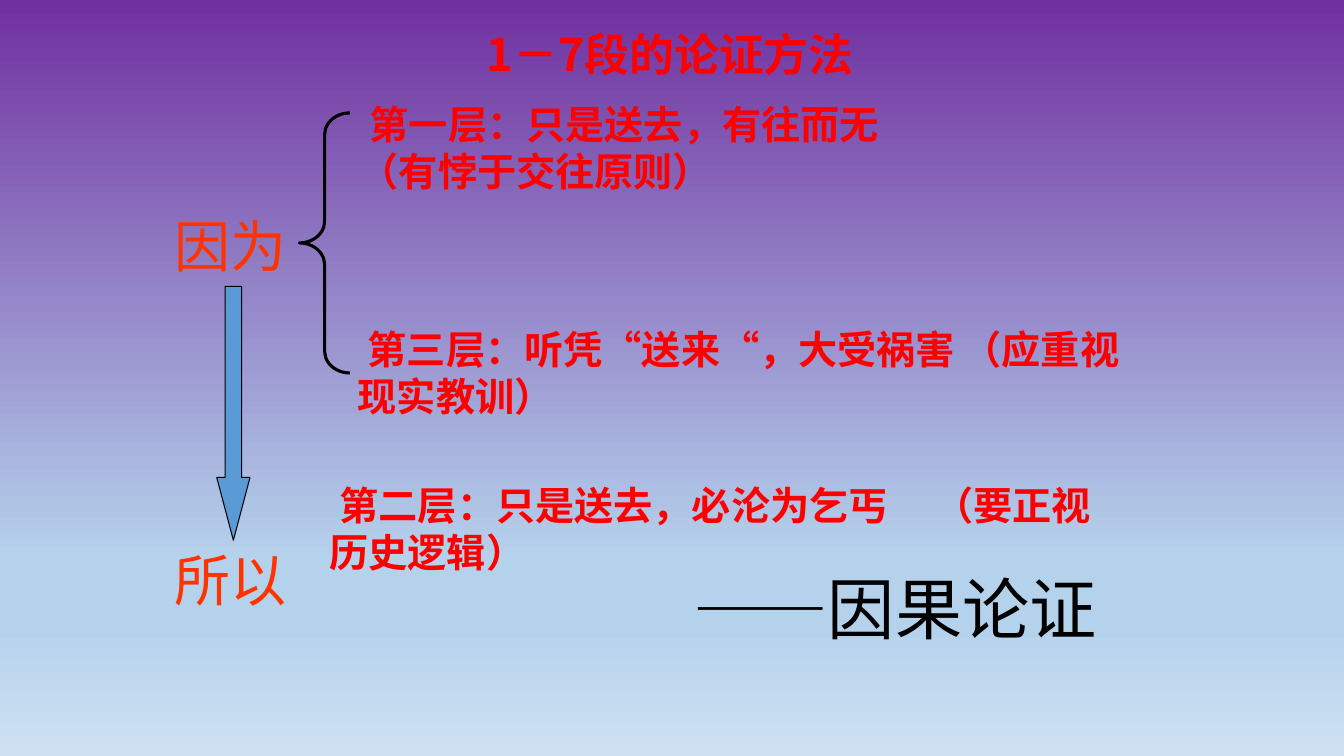
from copy import deepcopy
from lxml import etree
from pptx import Presentation
from pptx.dml.color import RGBColor
from pptx.enum.shapes import MSO_SHAPE
from pptx.oxml.ns import qn
from pptx.util import Inches, Pt

COLORS = {
    "purple": "7030A0", "sky": "B5D2EC", "pale": "CEE1F2",
    "red": "FF0000", "orange": "FF3300", "blue": "5B9BD5", "black": "000000",
}
SC = "Noto Sans CJK SC"
JP = "Noto Sans CJK JP"


def rgb(name):
    return RGBColor.from_string(COLORS[name])


def add_text(box, lines, size, font, color, bold=False, indent=0, tab=None):
    tf = s.shapes.add_textbox(*map(Inches, box)).text_frame
    tf.word_wrap = True
    for i, line in enumerate(lines):
        p = tf.paragraphs[0] if i == 0 else tf.add_paragraph()
        pPr = p._p.get_or_add_pPr()
        if i == 0 and indent:
            pPr.set("marL", "0")
            pPr.set("indent", str(Inches(indent)))
        if tab:
            tabs = etree.SubElement(pPr, qn("a:tabLst"))
            etree.SubElement(tabs, qn("a:tab"), pos=str(Inches(tab)), algn="l")
        r = p.add_run()
        r.text = line
        r.font.size = Pt(size)
        r.font.bold = bold
        r.font.name = font
        r.font.color.rgb = rgb(color)
        etree.SubElement(r._r.get_or_add_rPr(), qn("a:ea"), typeface=font)
    return tf


prs = Presentation()
prs.slide_width = Inches(13.33)
prs.slide_height = Inches(7.5)
s = prs.slides.add_slide(prs.slide_layouts[6])

fill = s.background.fill
fill.gradient()
fill.gradient_angle = 270
gs_list = fill.gradient_stops[0]._gs.getparent()
for _ in range(2):
    gs_list.append(deepcopy(gs_list[-1]))
stops = [(0, "purple"), (0.74, "sky"), (0.83, "sky"), (1, "pale")]
for stop, (position, name) in zip(fill.gradient_stops, stops):
    stop.position = position
    stop.color.rgb = rgb(name)

for top, label in [(2.05, "因为"), (5.36, "所以")]:
    add_text((1.63, top, 1.6, 0.77), [label], 40, "Roboto", "orange")

brace = s.shapes.add_shape(MSO_SHAPE.LEFT_BRACE, Inches(2.97), Inches(1.12), Inches(0.5), Inches(2.58))
brace.adjustments[0] = 0.43
brace.fill.background()
brace.line.width = Pt(2.25)

arrow = s.shapes.add_shape(MSO_SHAPE.DOWN_ARROW, Inches(2.15), Inches(2.84), Inches(0.33), Inches(2.52))
arrow.adjustments[1] = 1.89
arrow.fill.solid()
arrow.fill.fore_color.rgb = rgb("blue")
arrow.line.width = Pt(0.75)

for sp in (brace, arrow):
    sp.line.color.rgb = rgb("black")
    sp.shadow.inherit = False

layers = [
    (3.47, 0.95, SC, None, ["第一层：只是送去，有往而无", "（有悖于交往原则）"]),
    (3.17, 4.73, JP, 6.58, ["第二层：只是送去，必沦为乞丐\t（要正视历史逻辑）"]),
    (3.45, 3.18, JP, 6.7, ["第三层：听凭“送来“，大受祸害\t（应重视现实教训）"]),
]
for left, top, font, tab, lines in layers:
    add_text((left, top, 7.83, 1.04), lines, 28, font, "red", True, 0.1, tab)

tf = add_text((6.78, 5.67, 5.59, 1.1), ["——因果论证"], 48, SC, "black")
tf.paragraphs[0].line_spacing = 0.9
add_text((4.73, 0.22, 4.35, 0.64), ["1－7段的论证方法"], 32, SC, "red", True)

prs.save("out.pptx")
